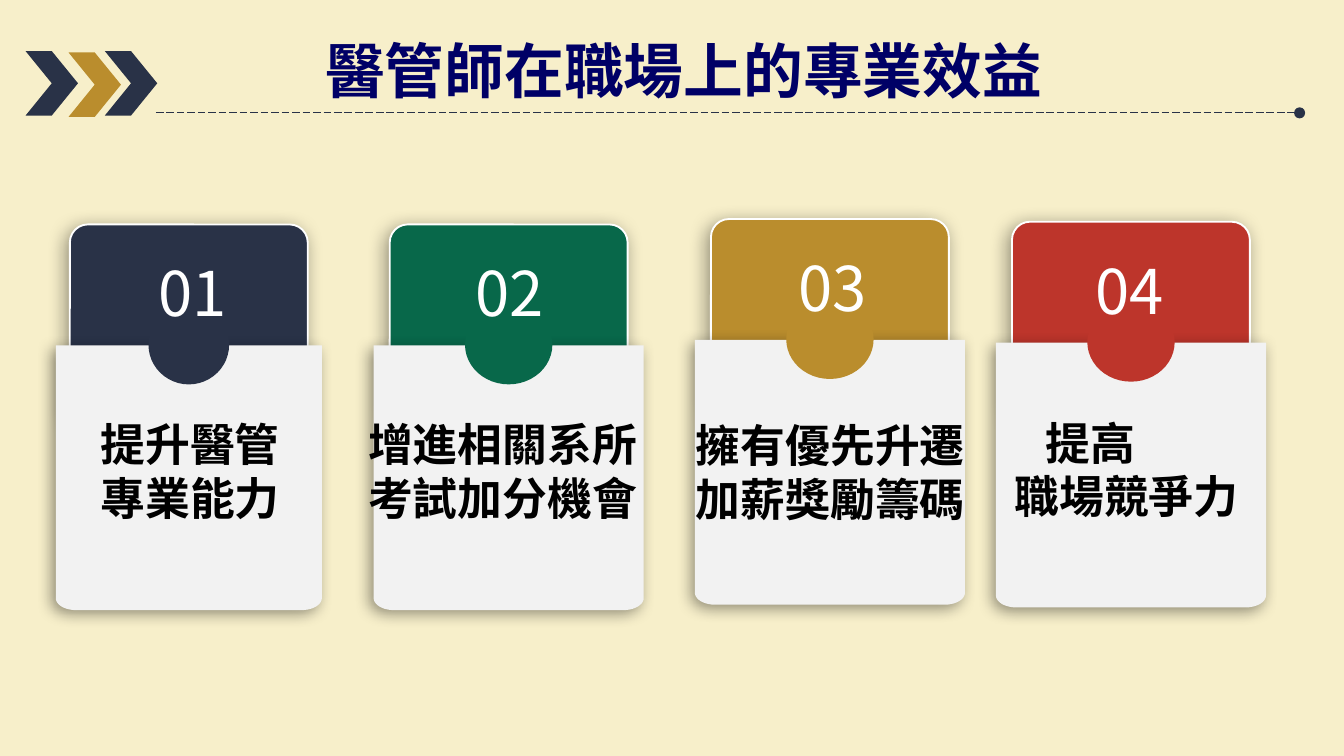
from dataclasses import dataclass
from math import cos, pi, sin

from lxml import etree
from pptx import Presentation
from pptx.dml.color import RGBColor
from pptx.enum.dml import MSO_LINE
from pptx.enum.shapes import MSO_CONNECTOR, MSO_SHAPE
from pptx.enum.text import MSO_AUTO_SIZE, PP_ALIGN
from pptx.oxml.ns import qn
from pptx.util import Inches, Pt

ROUND = MSO_SHAPE.ROUNDED_RECTANGLE
OVAL = MSO_SHAPE.OVAL
CHEVRON = MSO_SHAPE.CHEVRON
STRAIGHT = MSO_CONNECTOR.STRAIGHT
DASH = MSO_LINE.LONG_DASH
LEFT, CENTER = PP_ALIGN.LEFT, PP_ALIGN.CENTER
GROW = MSO_AUTO_SIZE.SHAPE_TO_FIT_TEXT


@dataclass(frozen=True)
class Theme:
    font: str = "Noto Sans CJK SC"
    back: str = "F7EFCA"
    title: str = "000066"
    text: str = "000000"
    white: str = "FFFFFF"
    paper: str = "F2F2F2"
    navy: str = "293247"
    green: str = "08684A"
    gold: str = "BA8D2D"
    red: str = "BD352B"
    title_size: int = 32
    num_size: int = 33
    body_size: int = 24
    leading: float = 1.2


@dataclass(frozen=True)
class Card:
    num: str
    color: str
    left: float
    top: float
    num_box: tuple  # left, width
    lines: tuple
    text_box: tuple  # left, top, width
    indent: float = 0
    paper_w: float = 2.01
    notch_w: float = 0.65


THEME = Theme()
TAB_W, TAB_H = 1.77, 1.49
PAPER_H = 1.97
CARDS = (
    Card("01", THEME.navy, 0.52, 1.67, (1.02, 0.83),
         ("提升醫管", "專業能力"), (0.65, 3.05, 1.86),
         paper_w=1.98, notch_w=0.6),
    Card("02", THEME.green, 2.9, 1.67, (3.26, 1.06),
         ("增進相關系所考試加分機會",), (2.64, 3.05, 2.36)),
    Card("03", THEME.gold, 5.29, 1.63, (5.71, 0.97),
         ("擁有優先升遷", "加薪獎勵籌碼"), (5.08, 3.06, 2.22)),
    Card("04", THEME.red, 7.53, 1.65, (7.93, 0.95),
         ("提高", "職場競爭力"), (7.45, 3.04, 1.94), indent=0.23),
)


def rgb(code):
    return RGBColor.from_string(code)


def add_shadow(shape, blur):
    """Give the shape a soft shadow that falls to the lower left."""
    shape.shadow.inherit = False
    effects = shape.element.spPr.find(qn("a:effectLst"))
    outer = etree.SubElement(
        effects, qn("a:outerShdw"), blurRad=str(Pt(blur)), dist=str(Pt(3)),
        dir=str(135 * 60000), algn="tr", rotWithShape="0")
    color = etree.SubElement(outer, qn("a:srgbClr"), val="000000")
    etree.SubElement(color, qn("a:alpha"), val="40000")


def paint(shape, fill, line=None):
    shape.shadow.inherit = False
    shape.fill.solid()
    shape.fill.fore_color.rgb = rgb(fill)
    if line:
        shape.line.color.rgb = rgb(line)
        shape.line.width = Pt(1)
    else:
        shape.line.fill.background()
    return shape


def add_shape(slide, kind, box, fill, line=None):
    shape = slide.shapes.add_shape(kind, *map(Inches, box))
    return paint(shape, fill, line)


def add_text(slide, lines, box, *, size, color, bold=False, align=LEFT,
             wrap=True, indent=0):
    """Add one paragraph a line; indent shifts the first one."""
    frame = slide.shapes.add_textbox(*map(Inches, box)).text_frame
    frame.word_wrap = wrap
    frame.auto_size = GROW
    for i, line in enumerate(lines):
        para = frame.add_paragraph() if i else frame.paragraphs[0]
        para.alignment = align
        para.line_spacing = Pt(size * THEME.leading)
        if indent and i == 0:
            para._p.get_or_add_pPr().set("marL", str(Inches(indent)))
        run = para.add_run()
        run.text = line
        font = run.font
        font.name, font.size, font.bold = THEME.font, Pt(size), bold
        font.color.rgb = rgb(color)
        etree.SubElement(run._r.rPr, qn("a:ea"), typeface=THEME.font)


def add_paper(slide, left, top, width):
    """Draw a sheet with square top and rounded bottom corners."""
    rx, ry, steps = 0.15, 0.09, 10
    right, low = left + width, top + PAPER_H
    turns = [i * pi / 2 / steps for i in range(steps + 1)]
    curve = [(rx * (1 - cos(t)), ry * (1 - sin(t))) for t in turns]
    points = [(right, top)]
    points += [(right - dx, low - dy) for dx, dy in curve]
    points += [(left + dx, low - dy) for dx, dy in reversed(curve)]
    pen = slide.shapes.build_freeform(Inches(left), Inches(top))
    pen.add_line_segments([(Inches(x), Inches(y)) for x, y in points])
    return paint(pen.convert_to_shape(), THEME.paper)


def add_card(slide, card):
    left, top = card.left, card.top
    mid = left + TAB_W / 2
    tab = add_shape(slide, ROUND, (left, top, TAB_W, TAB_H),
                    card.color, THEME.white)
    tab.adjustments[0] = 0.09
    add_shadow(tab, 10)
    paper = add_paper(slide, mid - card.paper_w / 2, top + 0.9, card.paper_w)
    add_shadow(paper, 8)
    add_shape(slide, OVAL,
              (mid - card.notch_w / 2, top + 0.6, card.notch_w, 0.59),
              card.color)
    x, width = card.num_box
    add_text(slide, [card.num], (x, top + 0.18, width, 0.66),
             size=THEME.num_size, color=THEME.white, align=CENTER)
    add_text(slide, card.lines, (*card.text_box, 0.91),
             size=THEME.body_size, color=THEME.text, bold=True,
             indent=card.indent)


def add_rule(slide):
    """Draw the dashed line that ends in a dot."""
    y = Inches(0.84)
    rule = slide.shapes.add_connector(STRAIGHT, Inches(1.16), y,
                                      Inches(9.67), y)
    rule.line.color.rgb = rgb(THEME.navy)
    rule.line.width = Pt(0.5)
    rule.line.dash_style = DASH
    etree.SubElement(rule.line._ln, qn("a:tailEnd"), type="oval")
    etree.SubElement(rule._element.spPr, qn("a:effectLst"))


def add_header(slide):
    add_rule(slide)
    add_text(slide, ["醫管師在職場上的專業效益"], (2.32, 0.2, 5.59, 0.64),
             size=THEME.title_size, color=THEME.title, bold=True, wrap=False)
    for x, y, color in ((0.51, 0.39, THEME.gold), (0.78, 0.38, THEME.navy),
                        (0.19, 0.38, THEME.navy)):
        add_shape(slide, CHEVRON, (x, y, 0.39, 0.48), color)


def main():
    deck = Presentation()
    deck.slide_width = Inches(10)
    deck.slide_height = deck.slide_width * 9 // 16
    slide = deck.slides.add_slide(deck.slide_layouts[6])
    slide.background.fill.solid()
    slide.background.fill.fore_color.rgb = rgb(THEME.back)
    for card in CARDS:
        add_card(slide, card)
    add_header(slide)
    deck.save("out.pptx")


if __name__ == "__main__":
    main()
